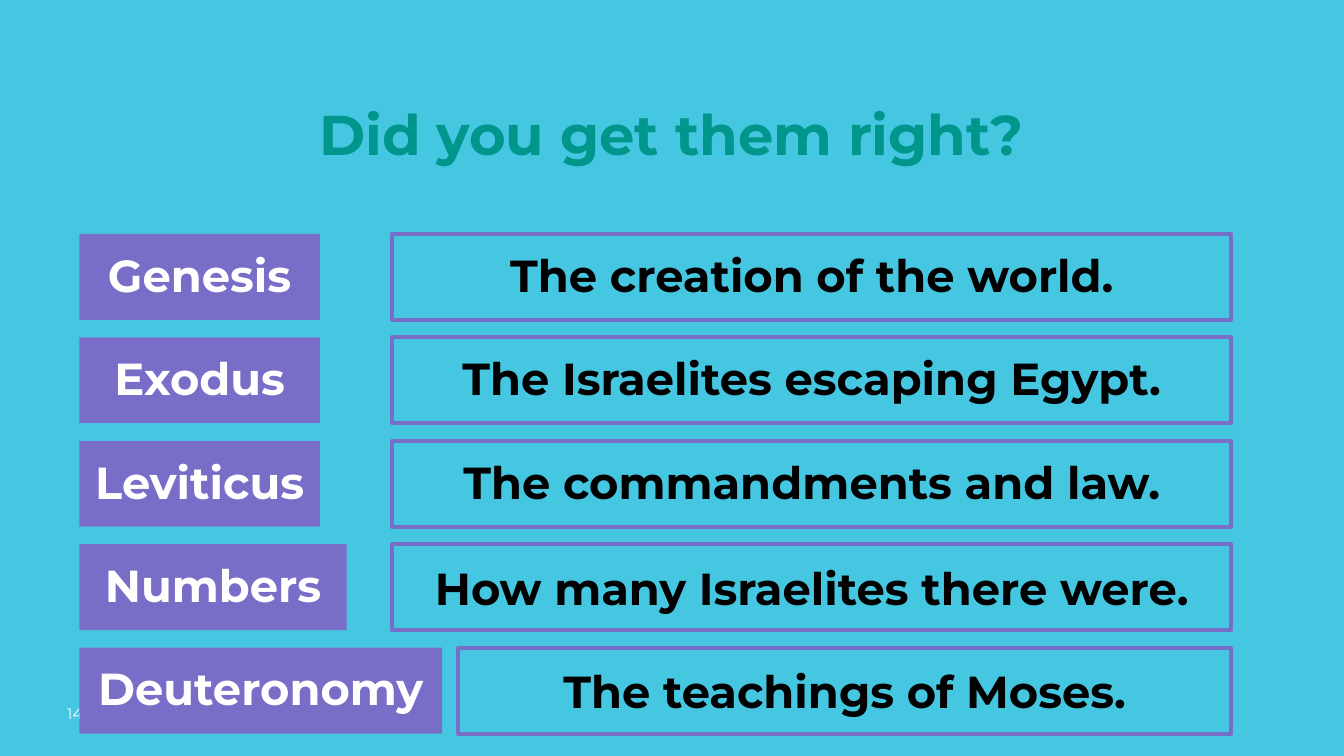
from pptx import Presentation
from pptx import util as u
from pptx.dml.color import RGBColor
from pptx.enum import shapes, text

SKY = RGBColor(0x45, 0xC7, 0xE2)
TEAL = RGBColor(0x00, 0x96, 0x8C)
PURPLE = RGBColor(0x78, 0x6E, 0xC8)
WHITE = RGBColor(0xFF, 0xFF, 0xFF)
BLACK = RGBColor(0x00, 0x00, 0x00)

TOP = text.MSO_ANCHOR.TOP
MIDDLE = text.MSO_ANCHOR.MIDDLE
LEFT = text.PP_ALIGN.LEFT
CENTER = text.PP_ALIGN.CENTER


def write(box, words, size, color, bold=True, align=CENTER, anchor=TOP, inset=0.1):
    frame = box.text_frame
    frame_format = {"word_wrap": True, "auto_size": text.MSO_AUTO_SIZE.NONE,
                    "vertical_anchor": anchor}
    for side in ("left", "top", "right", "bottom"):
        frame_format[f"margin_{side}"] = u.Inches(inset)
    for name, value in frame_format.items():
        setattr(frame, name, value)
    para = frame.paragraphs[0]
    para.alignment = align
    span = para.add_run()
    span.text = words
    span_format = {"name": "Montserrat", "size": u.Pt(size), "bold": bold}
    for name, value in span_format.items():
        setattr(span.font, name, value)
    span.font.color.rgb = color


def add_box(page, left, top, width):
    box = page.shapes.add_shape(
        shapes.MSO_SHAPE.RECTANGLE,
        u.Inches(left), u.Inches(top), u.Inches(width), u.Inches(0.64))
    box.shadow.inherit = False
    return box


deck = Presentation()
deck.slide_width = u.Inches(10)
deck.slide_height = u.Inches(10 * 9 / 16)
page = deck.slides.add_slide(deck.slide_layouts[5])
page.background.fill.solid()
page.background.fill.fore_color.rgb = SKY

title = page.shapes.title
title_place = {"left": 0.49, "top": 0.64, "width": 9.01, "height": 1.87}
for name, value in title_place.items():
    setattr(title, name, u.Inches(value))
write(title, "Did you get them right?", 30, TEAL)

number = page.shapes.add_textbox(
    u.Inches(0.5), u.Inches(5.24), u.Inches(0.79), u.Inches(0.2))
write(number, "14", 8, WHITE, bold=False, align=LEFT, inset=0)

BOOK_LEFT = 0.59
ANSWER_RIGHT = 9.16
FIRST_TOP = 1.74
ROW_STEP = 0.77
books = [
    ("Genesis", 1.79, "The creation of the world.", 2.92, TOP),
    ("Exodus", 1.79, "The Israelites escaping Egypt.", 2.92, TOP),
    ("Leviticus", 1.79, "The commandments and law.", 2.92, TOP),
    ("Numbers", 1.99, "How many Israelites there were.", 2.92, MIDDLE),
    ("Deuteronomy", 2.7, "The teachings of Moses.", 3.41, MIDDLE),
]
for row, (book, book_width, answer, answer_left, anchor) in enumerate(books):
    top = FIRST_TOP + row * ROW_STEP

    book_box = add_box(page, BOOK_LEFT, top, book_width)
    book_box.fill.solid()
    book_box.fill.fore_color.rgb = PURPLE
    book_box.line.fill.background()
    write(book_box, book, 24, WHITE)

    answer_box = add_box(page, answer_left, top, ANSWER_RIGHT - answer_left)
    answer_box.fill.background()
    answer_box.line.color.rgb = PURPLE
    answer_box.line.width = u.Pt(2.25)
    write(answer_box, answer, 24, BLACK, anchor=anchor)

deck.save("out.pptx")
